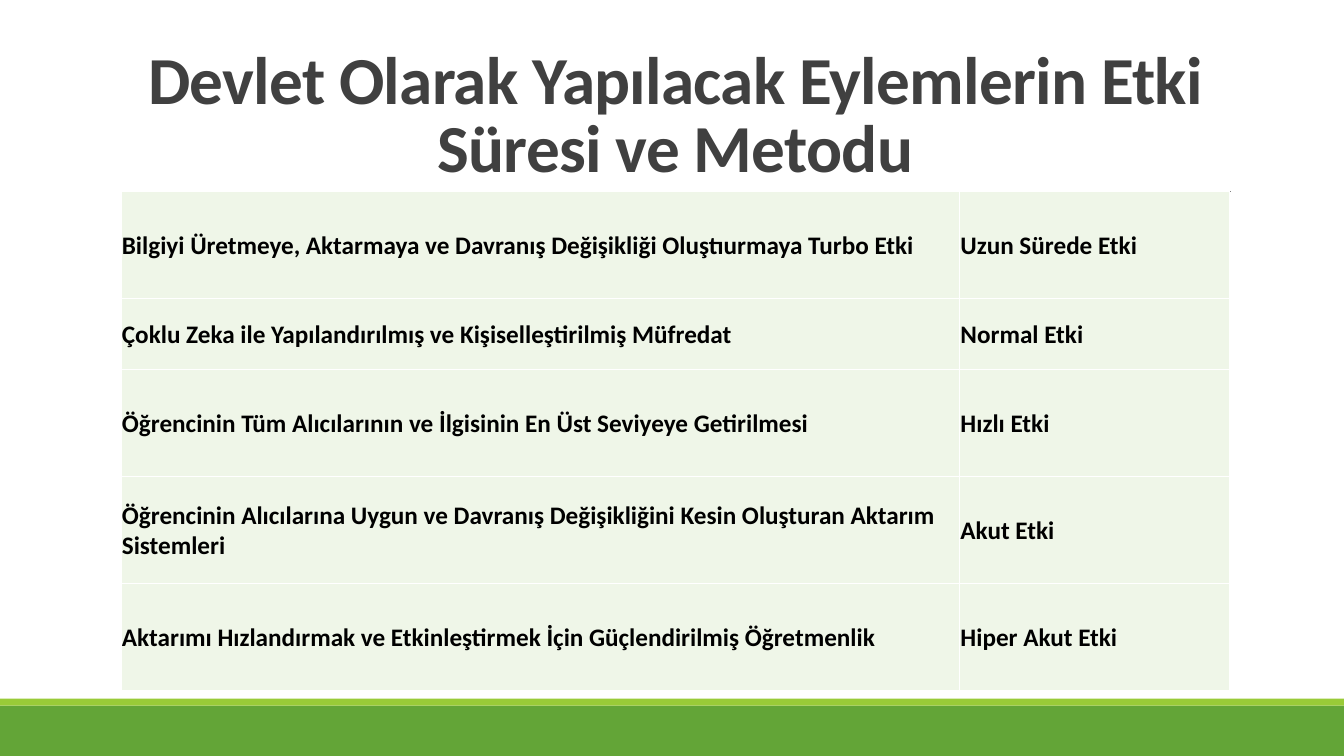
from lxml import etree
from pptx import Presentation
from pptx.dml.color import RGBColor
from pptx.enum import shapes, text
from pptx.oxml import ns
from pptx.util import Pt

TITLE = "Devlet Olarak Yapılacak Eylemlerin Etki Süresi ve Metodu"
ROWS = [
    ("Bilgiyi Üretmeye, Aktarmaya ve Davranış Değişikliği Oluştıurmaya Turbo Etki", "Uzun Sürede Etki"),
    ("Çoklu Zeka ile Yapılandırılmış ve Kişiselleştirilmiş Müfredat", "Normal Etki"),
    ("Öğrencinin Tüm Alıcılarının ve İlgisinin En Üst Seviyeye Getirilmesi", "Hızlı Etki"),
    ("Öğrencinin Alıcılarına Uygun ve Davranış Değişikliğini Kesin Oluşturan Aktarım Sistemleri", "Akut Etki"),
    ("Aktarımı Hızlandırmak ve Etkinleştirmek İçin Güçlendirilmiş Öğretmenlik", "Hiper Akut Etki"),
]
COLS = [599, 193]
HIGHS = [76.4, 51, 76.4, 76.4, 76.4]
COLORS = {"band": "63A537", "strip": "99CB38", "rule": "808080", "title": "404040",
          "text": "000000", "cell": "EFF6E8", "edge": "FFFFFF"}
WIDE, HIGH = 960, 540
LEFT, TOP = 86.4, 136.8
BAND, STRIP = 36, 5


def color(name):
    return RGBColor.from_string(COLORS[name])


def write(frame, words, size, tint, align=text.PP_ALIGN.LEFT, lead=1.0, track=0):
    frame.word_wrap = True
    para = frame.paragraphs[0]
    para.alignment = align
    para.line_spacing = lead
    run = para.add_run()
    run.text = words
    font = run.font
    font.name, font.size, font.bold = "Calibri", Pt(size), True
    font.color.rgb = color(tint)
    if track:
        run._r.get_or_add_rPr().set("spc", str(int(track * 100)))


def bar(top, high, tint):
    box = slide.shapes.add_shape(shapes.MSO_SHAPE.RECTANGLE, 0, Pt(top), Pt(WIDE), Pt(high))
    box.shadow.inherit = False
    box.fill.solid()
    box.fill.fore_color.rgb = color(tint)
    box.line.fill.background()


def edge(cell):
    props = cell._tc.get_or_add_tcPr()
    for spot, side in enumerate(("lnL", "lnR", "lnT", "lnB")):
        line = etree.Element(ns.qn(f"a:{side}"), w=str(Pt(1)))
        fill = etree.SubElement(line, ns.qn("a:solidFill"))
        etree.SubElement(fill, ns.qn("a:srgbClr"), val=COLORS["edge"])
        props.insert(spot, line)


deck = Presentation()
deck.slide_width, deck.slide_height = Pt(WIDE), Pt(HIGH)
slide = deck.slides.add_slide(deck.slide_layouts[6])

bar(HIGH - BAND, BAND, "band")
bar(HIGH - BAND - STRIP, STRIP, "strip")

rule = slide.shapes.add_connector(shapes.MSO_CONNECTOR.STRAIGHT, Pt(94.3), Pt(TOP), Pt(879.1), Pt(TOP))
rule.line.color.rgb = color("rule")
rule.line.width = Pt(0.5)
etree.SubElement(rule._element.spPr, ns.qn("a:effectLst"))

head = slide.shapes.add_textbox(Pt(LEFT), Pt(22.3), Pt(sum(COLS)), Pt(114.5)).text_frame
head.vertical_anchor = text.MSO_ANCHOR.BOTTOM
write(head, TITLE, 48, "title", align=text.PP_ALIGN.CENTER, lead=0.85, track=-0.5)

grid = slide.shapes.add_table(len(ROWS), len(COLS), Pt(LEFT), Pt(TOP), Pt(sum(COLS)), Pt(sum(HIGHS))).table
grid.first_row = grid.horz_banding = False
for col, wide in zip(grid.columns, COLS):
    col.width = Pt(wide)
for row, high, words in zip(grid.rows, HIGHS, ROWS):
    row.height = Pt(high)
    for cell, label in zip(row.cells, words):
        cell.margin_left = cell.margin_right = cell.margin_top = Pt(0.7)
        cell.margin_bottom = 0
        cell.vertical_anchor = text.MSO_ANCHOR.MIDDLE
        cell.fill.solid()
        cell.fill.fore_color.rgb = color("cell")
        edge(cell)
        write(cell.text_frame, label, 18, "text")

deck.save("out.pptx")
